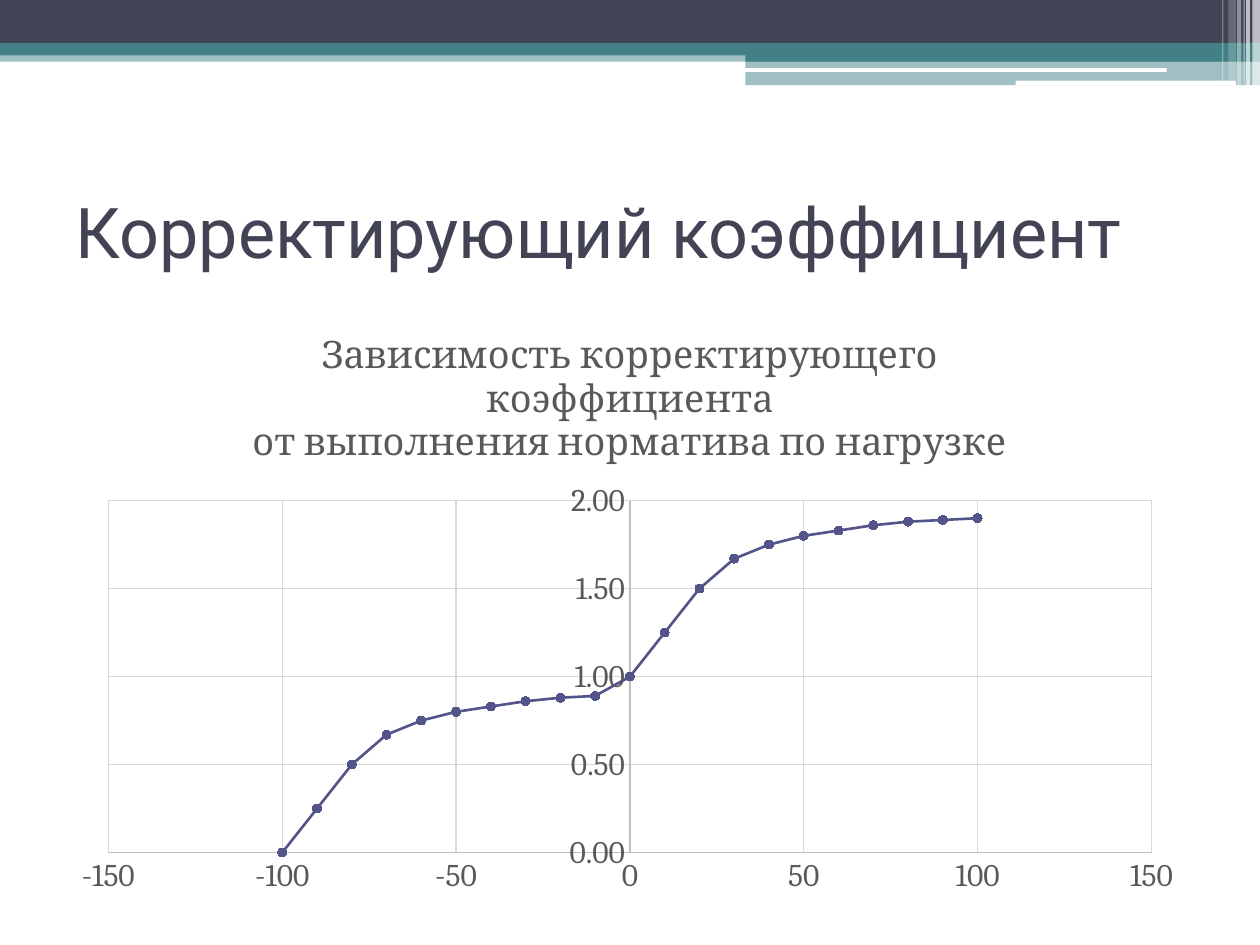
from lxml.etree import SubElement
from pptx import Presentation
from pptx.chart.data import XyChartData
from pptx.dml.color import RGBColor
from pptx.enum.chart import XL_CHART_TYPE, XL_MARKER_STYLE, XL_TICK_MARK
from pptx.enum.shapes import MSO_SHAPE
from pptx.enum.text import MSO_ANCHOR, PP_ALIGN
from pptx.oxml import parse_xml
from pptx.oxml.ns import nsdecls, qn
from pptx.util import Pt

NAVY, TEAL, WHITE = "424456", "438086", "FFFFFF"
GREY, AXIS, GRID, CURVE = "595959", "BFBFBF", "D9D9D9", "53548A"


def rgb(value):
    return RGBColor.from_string(value)


def add_bar(slide, box, color, opacity=100, kind=MSO_SHAPE.RECTANGLE):
    bar = slide.shapes.add_shape(kind, *map(Pt, box))
    bar.shadow.inherit = False
    bar.fill.solid()
    bar.fill.fore_color.rgb = rgb(color)
    bar.line.fill.background()
    if opacity < 100:
        fill_color = bar.fill._xPr.find(qn("a:solidFill"))[0]
        SubElement(fill_color, qn("a:alpha"), val=str(opacity * 1000))


def add_header(slide, left, top, width):
    # Full-width bands, then the thicker step on the right
    step, step_width = left + 426, width - 426
    for x, y, w, h, color, opacity in [
        (left, 28.8, width, 6.5, TEAL, 50),
        (left, 0, width, 24.5, NAVY, 100),
        (left, 24.5, width, 7.2, TEAL, 100),
        (step, 28, step_width, 7.2, TEAL, 100),
        (step, 34.8, step_width, 13.9, TEAL, 50),
    ]:
        add_bar(slide, (x, top + y, w, h), color, opacity)

    # White rules
    for x, y, w, h in [(425.5, 38.9, 241.2, 2.2), (580.3, 46.1, 126, 2.9)]:
        add_bar(slide, (left + x, top + y, w, h), WHITE,
                kind=MSO_SHAPE.ROUNDED_RECTANGLE)

    # Translucent stripes at the right edge
    for x, w, h, opacity in [
        (715.7, 4.3, 49, 65), (712.1, 2.2, 49, 65), (710.6, 0.7, 49, 60),
        (707, 2.2, 49, 40), (702, 4.3, 46, 20), (698.4, 0.7, 46, 30),
    ]:
        add_bar(slide, (left + x, top, w, h), WHITE, opacity)


def add_title(slide, left, top, width, height):
    title = slide.shapes.title
    title.left, title.top = Pt(left), Pt(top)
    title.width, title.height = Pt(width), Pt(height)
    frame = title.text_frame
    frame.text = "Корректирующий коэффициент"
    frame.vertical_anchor = MSO_ANCHOR.MIDDLE
    paragraph = frame.paragraphs[0]
    paragraph.alignment = PP_ALIGN.LEFT
    paragraph.font.name, paragraph.font.size = "Roboto", Pt(40)
    paragraph.font.color.rgb = rgb(NAVY)


def style_font(font, size, color):
    font.name, font.size, font.bold = "Cambria", Pt(size), False
    font.color.rgb = rgb(color)


def style_axis(axis, low, high, step, number_format):
    axis.minimum_scale, axis.maximum_scale, axis.major_unit = low, high, step
    axis.major_tick_mark = axis.minor_tick_mark = XL_TICK_MARK.NONE
    axis.has_major_gridlines = True
    for line, color in [(axis.format.line, AXIS),
                        (axis.major_gridlines.format.line, GRID)]:
        line.color.rgb, line.width = rgb(color), Pt(0.75)
    style_font(axis.tick_labels.font, 18, GREY)
    axis.tick_labels.number_format = number_format
    axis.tick_labels.number_format_is_linked = False


def add_coefficient_chart(slide, left, top, width, height):
    # Coefficient for each load deviation from 100 down to -100
    coefficients = [1.9, 1.89, 1.88, 1.86, 1.83, 1.8, 1.75, 1.67, 1.5, 1.25, 1,
                    0.89, 0.88, 0.86, 0.83, 0.8, 0.75, 0.67, 0.5, 0.25, 0]
    data = XyChartData()
    points = data.add_series("Series 1")
    for deviation, coefficient in zip(range(100, -101, -10), coefficients):
        points.add_data_point(deviation, coefficient)
    chart = slide.shapes.add_chart(
        XL_CHART_TYPE.XY_SCATTER_SMOOTH, Pt(left), Pt(top), Pt(width),
        Pt(height), data).chart
    chart.has_legend = False
    style_font(chart.font, 18, "000000")

    # Chart title
    chart.has_title = True
    heading = chart.chart_title.text_frame
    heading.text = ("Зависимость корректирующего\vкоэффициента\n"
                    "от выполнения норматива по нагрузке")
    for paragraph in heading.paragraphs:
        style_font(paragraph.font, 21.6, GREY)

    # Axes and plot area
    style_axis(chart.category_axis, -150, 150, 50, "General")
    style_axis(chart.value_axis, 0, 2, 0.5, "0.00")
    plot_area = chart._chartSpace.chart.plotArea
    for old_layout in plot_area.findall(qn("c:layout")):
        plot_area.remove(old_layout)
    plot_area.insert(0, parse_xml(
        f'<c:layout {nsdecls("c")}><c:manualLayout>'
        '<c:layoutTarget val="inner"/><c:xMode val="edge"/>'
        '<c:yMode val="edge"/><c:x val="0.04"/><c:y val="0.32"/>'
        '<c:w val="0.92"/><c:h val="0.59"/>'
        '</c:manualLayout></c:layout>'))

    # Smooth curve with round markers
    chart.plots[0].vary_by_categories = False
    curve = chart.plots[0].series[0]
    curve.smooth = True
    curve.format.line.color.rgb, curve.format.line.width = rgb(CURVE), Pt(1.5)
    curve.marker.style, curve.marker.size = XL_MARKER_STYLE.CIRCLE, 5
    curve.marker.format.fill.solid()
    curve.marker.format.fill.fore_color.rgb = rgb(CURVE)
    curve.marker.format.line.color.rgb = rgb(CURVE)


def main():
    deck = Presentation()
    deck.slide_width, deck.slide_height = Pt(720), Pt(540)
    slide = deck.slides.add_slide(deck.slide_layouts[5])
    add_header(slide, 0, 0, 720)
    add_title(slide, 36, 90, 648, 84)
    add_coefficient_chart(slide, 36, 177, 648, 341)
    deck.save("out.pptx")


if __name__ == "__main__":
    main()
